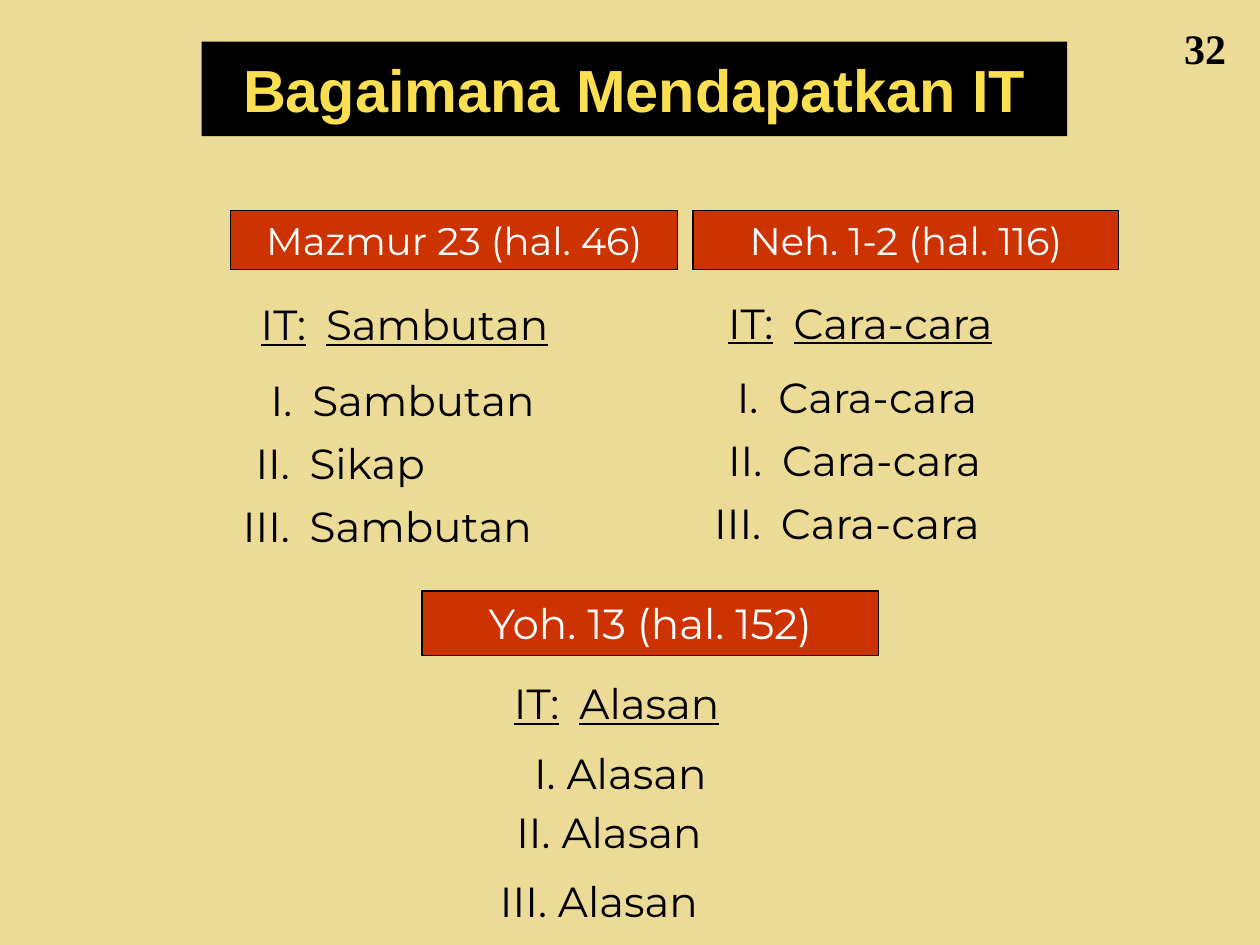
from dataclasses import dataclass

from lxml.etree import SubElement
from pptx import Presentation
from pptx.dml.color import RGBColor
from pptx.enum.shapes import MSO_SHAPE
from pptx.enum.text import MSO_ANCHOR, MSO_AUTO_SIZE, PP_ALIGN
from pptx.oxml.ns import qn
from pptx.util import Inches, Pt


@dataclass(frozen=True)
class Theme:
    background: str = "ECDB96"
    title_fill: str = "000000"
    title_text: str = "FBDF53"
    banner_fill: str = "CC3300"
    banner_text: str = "FFFFFF"
    ink: str = "000000"
    title_font: str = "Arial"
    body_font: str = "Montserrat"
    number_font: str = "Times New Roman"
    title_size: int = 34
    banner_size: int = 22
    body_size: int = 24


@dataclass(frozen=True)
class Box:
    left: float
    top: float
    width: float
    height: float = 0.5

    def lengths(self):
        return [Inches(n) for n in (self.left, self.top, self.width, self.height)]


@dataclass(frozen=True)
class Entry:
    text: str
    box: Box


@dataclass(frozen=True)
class Passage:
    reference: str
    banner: Box
    banner_size: int
    topic: Entry
    points: tuple[Entry, ...]


THEME = Theme()
# Distance from the text edge to the word that follows each marker
TAB_STOPS = {"IT:": 0.52, "I.": 0.33, "II.": 0.43, "III.": 0.53}


def stepped_points(words: tuple[str, ...], lefts: tuple[float, ...],
                   widths: tuple[float, ...], top: float) -> tuple[Entry, ...]:
    """Number the words I, II, III on lines half an inch apart."""
    return tuple(
        Entry(f"{'I' * (row + 1)}.\t{word}", Box(left, top + 0.5 * row, width))
        for row, (word, left, width) in enumerate(zip(words, lefts, widths))
    )


PASSAGES = (
    Passage(
        "Mazmur 23 (hal. 46)", Box(1.83, 1.67, 3.55, 0.47), THEME.banner_size,
        Entry("IT:\tSambutan", Box(1.97, 2.32, 2.75)),
        stepped_points(("Sambutan", "Sikap", "Sambutan"),
                       (2.05, 1.93, 1.83), (2.52, 1.83, 2.78), 2.92),
    ),
    Passage(
        "Neh. 1-2 (hal. 116)", Box(5.5, 1.67, 3.38, 0.47), THEME.banner_size,
        Entry("IT:\tCara-cara", Box(5.68, 2.31, 2.71)),
        stepped_points(("Cara-cara",) * 3,
                       (5.75, 5.68, 5.57), (2.47, 2.61, 2.74), 2.9),
    ),
    Passage(
        "Yoh. 13 (hal. 152)", Box(3.35, 4.69, 3.62, 0.51), THEME.body_size,
        Entry("IT:\tAlasan", Box(3.98, 5.33, 2.15)),
        (
            Entry("I. Alasan", Box(4.14, 5.88, 1.81, 0.51)),
            Entry("II. Alasan", Box(4, 6.35, 1.94, 0.51)),
            Entry("III. Alasan", Box(3.87, 6.9, 2.07, 0.51)),
        ),
    ),
)


def style_text(paragraph, font: str, size: int, color: str,
               bold: bool = False, underline: bool = False) -> None:
    for run in paragraph.runs:
        run.font.name = font
        run.font.size = Pt(size)
        run.font.color.rgb = RGBColor.from_string(color)
        run.font.bold = bold
        run.font.underline = underline


def add_panel(slide, text: str, box: Box, fill: str):
    """Add a filled rectangle with one centred line of text."""
    shape = slide.shapes.add_shape(MSO_SHAPE.RECTANGLE, *box.lengths())
    shape.shadow.inherit = False
    shape.fill.solid()
    shape.fill.fore_color.rgb = RGBColor.from_string(fill)
    shape.text_frame.text = text
    shape.text_frame.paragraphs[0].alignment = PP_ALIGN.CENTER
    return shape


def add_title(slide, text: str, box: Box) -> None:
    shape = add_panel(slide, text, box, THEME.title_fill)
    shape.line.fill.background()
    shape.text_frame.vertical_anchor = MSO_ANCHOR.MIDDLE
    style_text(shape.text_frame.paragraphs[0], THEME.title_font,
               THEME.title_size, THEME.title_text, bold=True)


def add_banner(slide, text: str, box: Box, size: int) -> None:
    shape = add_panel(slide, text, box, THEME.banner_fill)
    shape.line.color.rgb = RGBColor.from_string(THEME.ink)
    shape.line.width = Pt(0.75)
    shape.text_frame.vertical_anchor = MSO_ANCHOR.TOP
    shape.text_frame.auto_size = MSO_AUTO_SIZE.SHAPE_TO_FIT_TEXT
    style_text(shape.text_frame.paragraphs[0], THEME.body_font,
               size, THEME.banner_text)


def add_line_of_text(slide, entry: Entry, font: str = THEME.body_font,
                     bold: bool = False, underline: bool = False) -> None:
    text_frame = slide.shapes.add_textbox(*entry.box.lengths()).text_frame
    text_frame.word_wrap = False
    text_frame.auto_size = MSO_AUTO_SIZE.SHAPE_TO_FIT_TEXT
    text_frame.text = entry.text
    paragraph = text_frame.paragraphs[0]
    marker, tab, _ = entry.text.partition("\t")
    if tab:
        properties = paragraph._p.get_or_add_pPr()
        tab_list = SubElement(properties, qn("a:tabLst"))
        SubElement(tab_list, qn("a:tab"),
                   pos=str(Inches(TAB_STOPS[marker])), algn="l")
    style_text(paragraph, font, THEME.body_size, THEME.ink, bold, underline)


def add_passage(slide, passage: Passage) -> None:
    add_banner(slide, passage.reference, passage.banner, passage.banner_size)
    add_line_of_text(slide, passage.topic, underline=True)
    for point in passage.points:
        add_line_of_text(slide, point)


def main() -> None:
    presentation = Presentation()
    presentation.slide_width = Inches(10)
    presentation.slide_height = Inches(7.5)
    slide = presentation.slides.add_slide(presentation.slide_layouts[6])
    slide.background.fill.solid()
    slide.background.fill.fore_color.rgb = RGBColor.from_string(THEME.background)

    add_title(slide, "Bagaimana Mendapatkan IT", Box(1.6, 0.33, 6.87, 0.75))
    add_line_of_text(slide, Entry("32", Box(9.3, 0.13, 0.53)),
                     font=THEME.number_font, bold=True)
    for passage in PASSAGES:
        add_passage(slide, passage)

    presentation.save("out.pptx")


if __name__ == "__main__":
    main()
